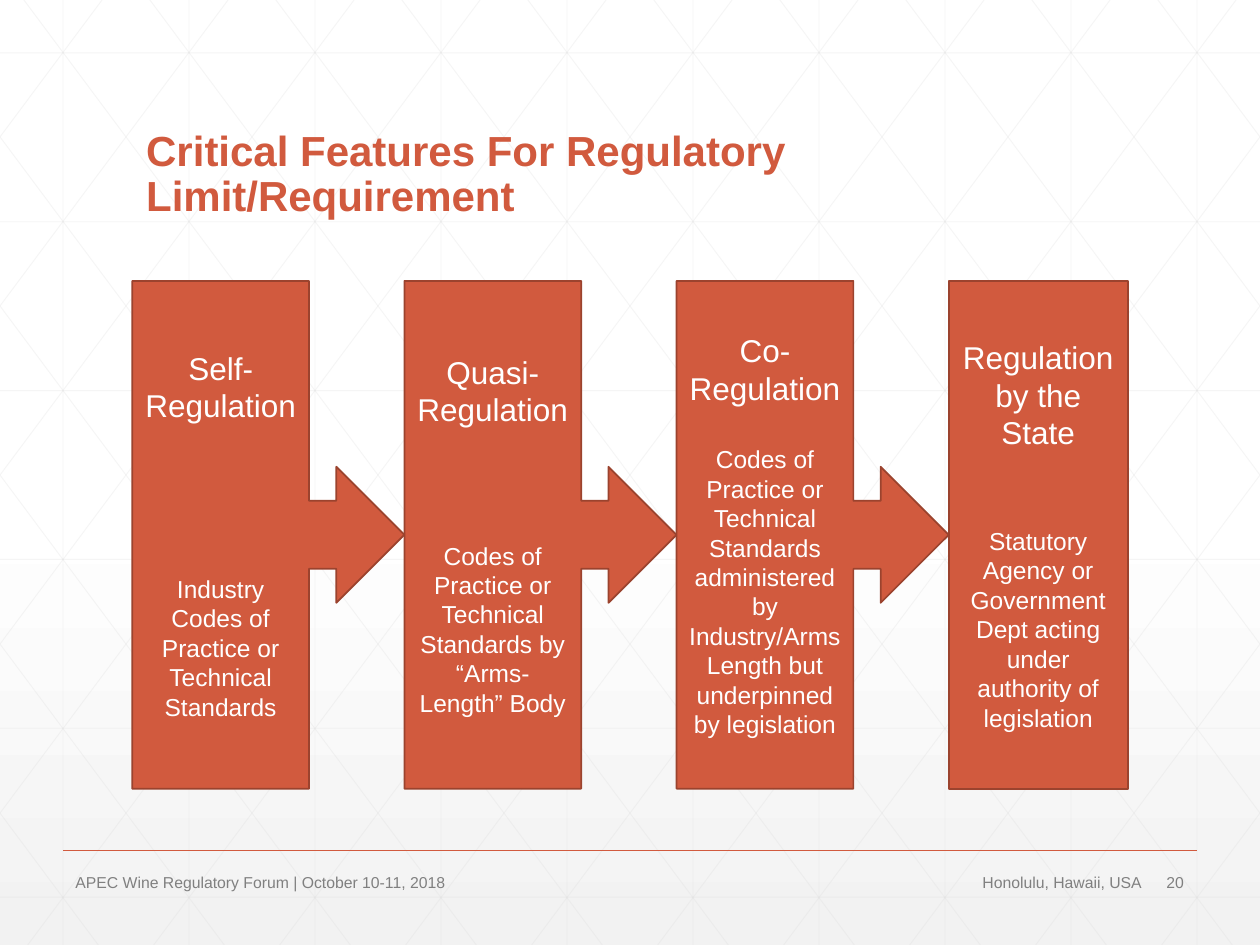
"""Build the slide on critical features for a regulatory limit or requirement."""
from dataclasses import dataclass

import lxml.etree
import pptx
import pptx.dml.color
import pptx.enum.shapes
import pptx.enum.text
import pptx.oxml.ns
import pptx.util
from pptx.dml.color import RGBColor
from pptx.enum.shapes import MSO_SHAPE
from pptx.enum.text import MSO_ANCHOR, PP_ALIGN
from pptx.util import Inches, Pt

ORANGE = RGBColor(0xD1, 0x5A, 0x3E)
DARK_ORANGE = RGBColor(0x9B, 0x43, 0x2E)
WHITE = RGBColor(0xFF, 0xFF, 0xFF)
PALE_GRAY = RGBColor(0xF2, 0xF2, 0xF2)
GRID_GRAY = RGBColor(0xD9, 0xD9, 0xD9)
FOOTER_GRAY = RGBColor(0x80, 0x80, 0x80)

WIDTH, HEIGHT = 10, 7.5
DIAGONAL_RUN = 5.59
STAGE_LEFT, STAGE_TOP, STAGE_PITCH, STAGE_HEIGHT = 1.05, 2.23, 2.16, 4.03


@dataclass
class Stage:
    heading: str
    detail: str
    gap: float
    width: float = STAGE_PITCH
    preset: MSO_SHAPE = MSO_SHAPE.RIGHT_ARROW_CALLOUT


@dataclass
class FooterItem:
    text: str
    left: float
    width: float
    alignment: PP_ALIGN = PP_ALIGN.LEFT


STAGES = [
    Stage("Self-Regulation", "Industry Codes of Practice or Technical Standards", 85.6),
    Stage("Quasi-Regulation",
          "Codes of Practice or Technical Standards by “Arms-Length” Body", 64.2),
    Stage("Co-Regulation",
          "Codes of Practice or Technical Standards administered by Industry/Arms "
          "Length but underpinned by legislation", 21.4),
    Stage("Regulation by the State",
          "Statutory Agency or Government Dept acting under authority of legislation",
          42.8, 1.42, MSO_SHAPE.RECTANGLE),
]

FOOTER = [
    FooterItem("20", 9.16, 0.34),
    FooterItem("APEC Wine Regulatory Forum | October 10-11, 2018", 0.5, 5.03),
    FooterItem("Honolulu, Hawaii, USA", 5.58, 3.58, PP_ALIGN.RIGHT),
]


def write_text(paragraph, text: str, *, size: float, color: RGBColor,
               bold: bool = False, alignment: PP_ALIGN = PP_ALIGN.LEFT,
               space_before: float = 0, line_spacing: float = 1.0) -> None:
    paragraph.alignment = alignment
    paragraph.space_before = Pt(space_before)
    paragraph.line_spacing = line_spacing
    run = paragraph.add_run()
    run.text = text
    run.font.name = "Arial"
    run.font.size = Pt(size)
    run.font.bold = bold
    run.font.color.rgb = color


def add_line(slide, start: tuple[float, float], end: tuple[float, float],
             color: RGBColor, width: float, opacity: int = 100) -> None:
    connector = slide.shapes.add_connector(
        pptx.enum.shapes.MSO_CONNECTOR.STRAIGHT, *map(Inches, start + end))
    connector.line.color.rgb = color
    connector.line.width = Pt(width)
    qualify = pptx.oxml.ns.qn
    properties = connector.element.spPr
    lxml.etree.SubElement(properties, qualify("a:effectLst"))
    if opacity < 100:
        fill_color = properties.find(".//" + qualify("a:srgbClr"))
        alpha = lxml.etree.SubElement(fill_color, qualify("a:alpha"))
        alpha.set("val", str(opacity * 1000))


def add_background(slide) -> None:
    fill = slide.background.fill
    fill.gradient()
    fill.gradient_angle = 270
    for stop, position, color in zip(fill.gradient_stops, (0.53, 1), (WHITE, PALE_GRAY)):
        stop.position = position
        stop.color.rgb = color


def add_grid(slide) -> None:
    lines = [((column + 0.5, 0), (column + 0.5, HEIGHT)) for column in range(10)]
    lines += [((0, 0.42 + 1.34 * row), (WIDTH, 0.42 + 1.34 * row)) for row in range(6)]
    slope = HEIGHT / DIAGONAL_RUN
    for step in range(-5, 10):
        origin = 0.19 + step
        left, right = max(origin, 0), min(origin + DIAGONAL_RUN, WIDTH)
        top, bottom = (left - origin) * slope, (right - origin) * slope
        lines.append(((left, top), (right, bottom)))
        lines.append(((WIDTH - left, top), (WIDTH - right, bottom)))
    for start, end in lines:
        add_line(slide, start, end, GRID_GRAY, 0.5, opacity=25)


def add_title(slide) -> None:
    title = slide.shapes.title
    title.left, title.top = Inches(1.06), Inches(0.55)
    title.width, title.height = Inches(7.88), Inches(1.25)
    frame = title.text_frame
    frame.vertical_anchor = MSO_ANCHOR.BOTTOM
    frame.auto_size = pptx.enum.text.MSO_AUTO_SIZE.NONE
    write_text(frame.paragraphs[0], "Critical Features For Regulatory Limit/Requirement",
               size=24, color=ORANGE, bold=True, line_spacing=0.9)
    title.element.getparent().append(title.element)


def add_footer_item(slide, item: FooterItem) -> None:
    box = slide.shapes.add_textbox(
        Inches(item.left), Inches(6.88), Inches(item.width), Inches(0.24))
    box.text_frame.word_wrap = True
    write_text(box.text_frame.paragraphs[0], item.text, size=9, color=FOOTER_GRAY,
               alignment=item.alignment)


def add_stage(slide, stage: Stage, index: int) -> None:
    shape = slide.shapes.add_shape(
        stage.preset, Inches(STAGE_LEFT + STAGE_PITCH * index), Inches(STAGE_TOP),
        Inches(stage.width), Inches(STAGE_HEIGHT))
    shape.shadow.inherit = False
    shape.fill.solid()
    shape.fill.fore_color.rgb = ORANGE
    shape.line.color.rgb = DARK_ORANGE
    shape.line.width = Pt(1)
    frame = shape.text_frame
    frame.word_wrap = True
    frame.vertical_anchor = MSO_ANCHOR.MIDDLE
    write_text(frame.paragraphs[0], stage.heading, size=18, color=WHITE,
               alignment=PP_ALIGN.CENTER)
    write_text(frame.add_paragraph(), stage.detail, size=14, color=WHITE,
               alignment=PP_ALIGN.CENTER, space_before=stage.gap)


def main() -> None:
    presentation = pptx.Presentation()
    presentation.slide_width, presentation.slide_height = Inches(WIDTH), Inches(HEIGHT)
    slide = presentation.slides.add_slide(presentation.slide_layouts[5])
    add_background(slide)
    add_grid(slide)
    add_line(slide, (0.5, 6.75), (9.5, 6.75), ORANGE, 1)
    add_title(slide)
    for item in FOOTER:
        add_footer_item(slide, item)
    for index, stage in enumerate(STAGES):
        add_stage(slide, stage, index)
    presentation.save("out.pptx")


if __name__ == "__main__":
    main()
